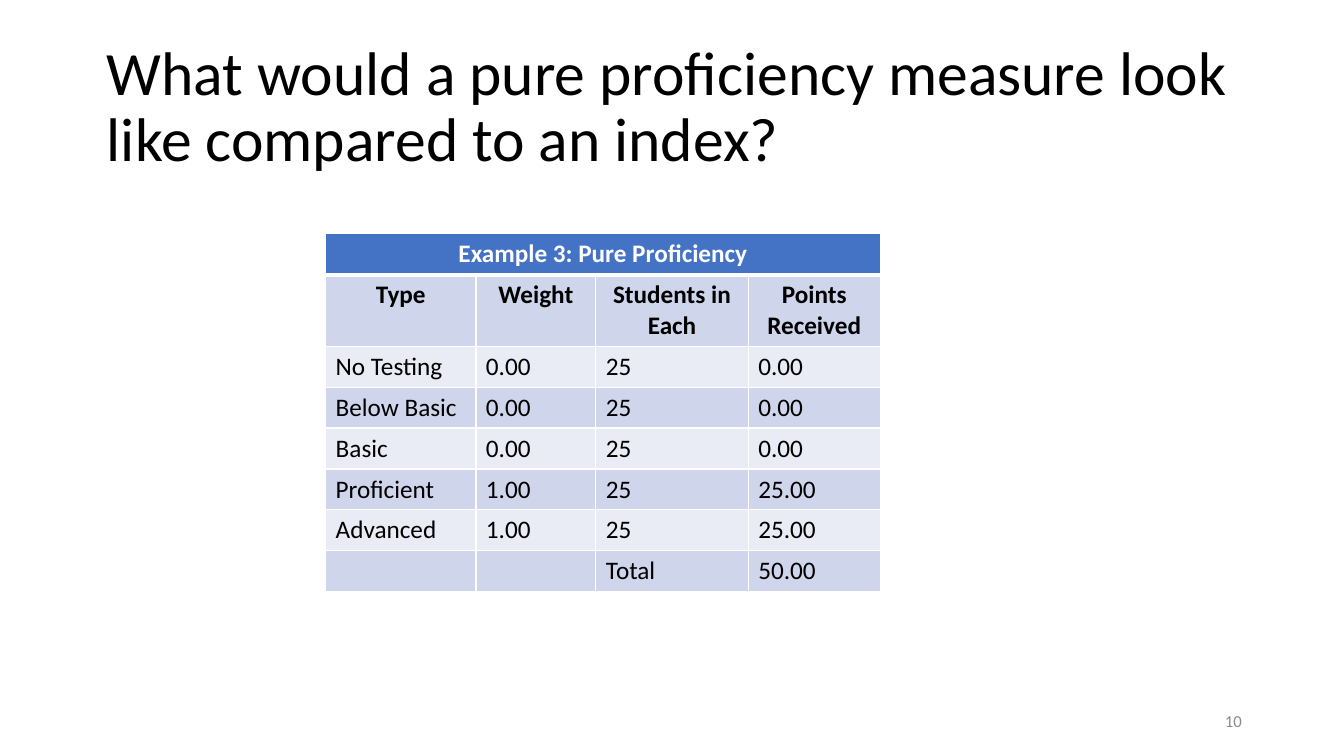
from dataclasses import dataclass

from lxml.etree import SubElement
from pptx import Presentation
from pptx.dml.color import RGBColor
from pptx.enum.text import MSO_ANCHOR, MSO_AUTO_SIZE, PP_ALIGN
from pptx.oxml.ns import qn
from pptx.util import Inches, Pt

SLIDE_WIDTH = Inches(13.33)
SLIDE_HEIGHT = Inches(7.5)
WHITE, BLACK, GREY = "FFFFFF", "000000", "8C8C8C"
HEADING_FILL, DARK_BAND, LIGHT_BAND = "4472C4", "CFD5EA", "E9EBF5"

COLUMN_SHARES = (11.18, 8.93, 11.33, 9.83)
ROWS = (
    ("Example 3: Pure Proficiency", "", "", ""),
    ("Type", "Weight", "Students in Each", "Points Received"),
    ("No Testing", "0.00", "25", "0.00"),
    ("Below Basic", "0.00", "25", "0.00"),
    ("Basic", "0.00", "25", "0.00"),
    ("Proficient", "1.00", "25", "25.00"),
    ("Advanced", "1.00", "25", "25.00"),
    ("", "", "Total", "50.00"),
)


@dataclass(frozen=True)
class Area:
    """A rectangle in percent of the slide's width and height."""

    left: float
    top: float
    width: float
    height: float

    def lengths(self) -> tuple[int, int, int, int]:
        """Return left, top, width and height as slide lengths."""
        return (across(self.left), down(self.top),
                across(self.width), down(self.height))


@dataclass(frozen=True)
class TextStyle:
    """The look of one paragraph and its run."""

    size: int
    color: str = BLACK
    bold: bool = False
    alignment: PP_ALIGN = PP_ALIGN.LEFT
    line_spacing: float = 1.0


TITLE_AREA = Area(7.2, 4.67, 86.25, 19.33)
NUMBER_AREA = Area(70.65, 92.67, 22.5, 5.33)
TABLE_AREA = Area(24.23, 30.93, sum(COLUMN_SHARES), 43.2)

TITLE_STYLE = TextStyle(44, line_spacing=0.9)
NUMBER_STYLE = TextStyle(12, GREY, alignment=PP_ALIGN.RIGHT)
HEADING_STYLE = TextStyle(18, WHITE, True, PP_ALIGN.CENTER)
LABEL_STYLE = TextStyle(18, bold=True, alignment=PP_ALIGN.CENTER)
VALUE_STYLE = TextStyle(18)


def across(percent: float) -> int:
    """Turn a share of the slide's width into a length."""
    return round(SLIDE_WIDTH * percent / 100)


def down(percent: float) -> int:
    """Turn a share of the slide's height into a length."""
    return round(SLIDE_HEIGHT * percent / 100)


def color_of(value: str) -> RGBColor:
    """Turn a hex string into a colour."""
    return RGBColor.from_string(value)


def write(text_frame, text: str, style: TextStyle) -> None:
    """Add one styled run to the first paragraph."""
    paragraph = text_frame.paragraphs[0]
    paragraph.alignment = style.alignment
    paragraph.line_spacing = style.line_spacing
    run = paragraph.add_run()
    run.text = text
    run.font.name = "Calibri"
    run.font.size = Pt(style.size)
    run.font.bold = style.bold
    run.font.color.rgb = color_of(style.color)


def place_text(shape, area: Area, text: str, style: TextStyle) -> None:
    """Move a text shape to its area and fill it with text."""
    shape.left, shape.top, shape.width, shape.height = area.lengths()
    text_frame = shape.text_frame
    text_frame.word_wrap = True
    text_frame.auto_size = MSO_AUTO_SIZE.NONE
    text_frame.vertical_anchor = MSO_ANCHOR.MIDDLE
    write(text_frame, text, style)


def add_borders(cell, top: int, bottom: int) -> None:
    """Draw white borders, with top and bottom widths in points."""
    properties = cell._tc.get_or_add_tcPr()
    widths = {"a:lnL": 1, "a:lnR": 1, "a:lnT": top, "a:lnB": bottom}
    for position, (tag, width) in enumerate(widths.items()):
        border = SubElement(properties, qn(tag), w=str(Pt(width)))
        fill = SubElement(border, qn("a:solidFill"))
        SubElement(fill, qn("a:srgbClr"), val=WHITE)
        properties.insert(position, border)


def row_look(row: int) -> tuple[str, TextStyle]:
    """Return the fill and text style of a table row."""
    if row == 0:
        return HEADING_FILL, HEADING_STYLE
    fill = DARK_BAND if row % 2 else LIGHT_BAND
    return fill, LABEL_STYLE if row == 1 else VALUE_STYLE


def add_proficiency_table(slide) -> None:
    """Add the banded table of weights and points."""
    frame = slide.shapes.add_table(
        len(ROWS), len(COLUMN_SHARES), *TABLE_AREA.lengths())
    table = frame.table
    for column, share in zip(table.columns, COLUMN_SHARES):
        column.width = across(share)
    table.cell(0, 0).merge(table.cell(0, len(COLUMN_SHARES) - 1))
    for row, texts in enumerate(ROWS):
        fill, style = row_look(row)
        for column, text in enumerate(texts):
            cell = table.cell(row, column)
            cell.fill.solid()
            cell.fill.fore_color.rgb = color_of(fill)
            add_borders(cell, 3 if row == 1 else 1, 3 if row == 0 else 1)
            if text:
                write(cell.text_frame, text, style)


def main() -> None:
    """Build and save the slide."""
    presentation = Presentation()
    presentation.slide_width = SLIDE_WIDTH
    presentation.slide_height = SLIDE_HEIGHT
    slide = presentation.slides.add_slide(presentation.slide_layouts[5])
    place_text(
        slide.shapes.title, TITLE_AREA,
        "What would a pure proficiency measure look like compared to an index?",
        TITLE_STYLE)
    number_box = slide.shapes.add_textbox(*NUMBER_AREA.lengths())
    place_text(number_box, NUMBER_AREA, "10", NUMBER_STYLE)
    add_proficiency_table(slide)
    presentation.save("out.pptx")


if __name__ == "__main__":
    main()
